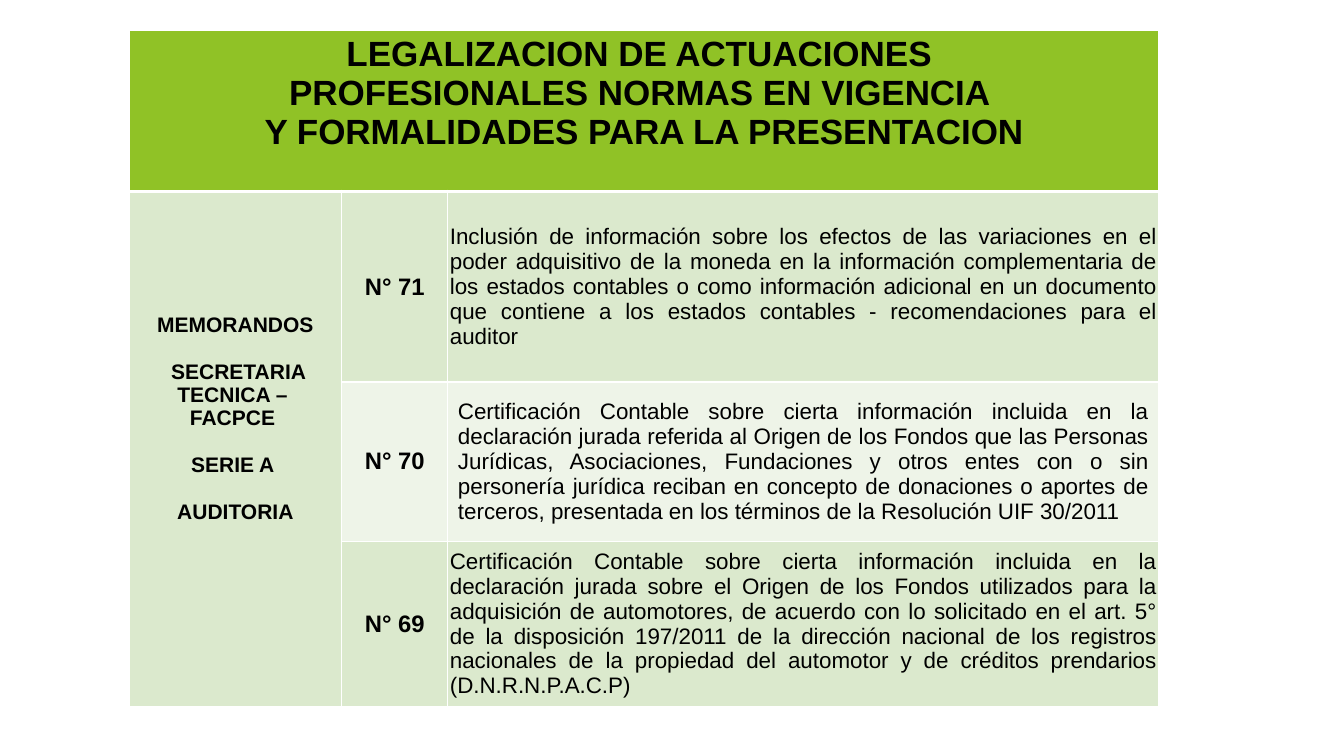
from lxml.etree import SubElement
from pptx import Presentation
from pptx.dml.color import RGBColor as RGB
from pptx.enum.text import MSO_ANCHOR as ANCHOR, PP_ALIGN as ALIGN
from pptx.oxml.ns import qn
from pptx.util import Inches, Pt

COLORS = {"header": "90C226", "band": "DBE9CD", "light": "EEF4E8",
          "text": "000000", "border": "FFFFFF"}
TITLE = {"size": Pt(25), "bold": True}
SERIES = {"size": Pt(15), "bold": True}
NUMBER = {"size": Pt(17), "bold": True}
DETAIL = {"size": Pt(16), "bold": False}
TIGHT = dict.fromkeys(
    ("margin_left", "margin_right", "margin_top", "margin_bottom"), Inches(0.02))


class Deck:
    def __init__(self, width, height):
        self.prs = Presentation()
        self.prs.slide_width, self.prs.slide_height = Inches(width), Inches(height)
        self.s = self.prs.slides.add_slide(self.prs.slide_layouts[6])

    def x(self, percent):
        return int(self.prs.slide_width * percent / 100)

    def y(self, percent):
        return int(self.prs.slide_height * percent / 100)

    def table(self, left, top, widths, heights):
        """Add a table; all lengths are percentages of the slide."""
        tbl = self.s.shapes.add_table(
            len(heights), len(widths), self.x(left), self.y(top),
            self.x(sum(widths)), self.y(sum(heights))).table
        tbl.first_row = tbl.horz_banding = False
        for col, width in zip(tbl.columns, widths):
            col.width = self.x(width)
        for row, height in zip(tbl.rows, heights):
            row.height = self.y(height)
        return tbl

    def finish(self, cell, color, thick=""):
        """Draw the borders, the thick side in 3 pt, then fill the cell."""
        tcPr = cell._tc.get_or_add_tcPr()
        for side in "LRTB":
            ln = SubElement(tcPr, qn(f"a:ln{side}"),
                            w=str(Pt(3 if side == thick else 1)))
            fill = SubElement(ln, qn("a:solidFill"))
            SubElement(fill, qn("a:srgbClr"), val=COLORS["border"])
        cell.fill.solid()
        cell.fill.fore_color.rgb = RGB.from_string(COLORS[color])

    def text(self, cell, lines, font, align=ALIGN.CENTER, gaps=(), **box):
        """Write one paragraph a line; gaps lists those set off by a line."""
        for name, value in box.items():
            setattr(cell, name, value)
        tf = cell.text_frame
        for i, line in enumerate(lines):
            p = tf.add_paragraph() if i else tf.paragraphs[0]
            p.alignment = align
            if i in gaps:
                p.space_before = Pt(16.8)
            r = p.add_run()
            r.text = line
            for name, value in {"name": "Arial", **font}.items():
                setattr(r.font, name, value)
            r.font.color.rgb = RGB.from_string(COLORS["text"])


MEMOS = [
    ("N° 71", "Inclusión de información sobre los efectos de las variaciones en el "
     "poder adquisitivo de la moneda en la información complementaria de los estados "
     "contables o como información adicional en un documento que contiene a los "
     "estados contables - recomendaciones para el auditor", "band", TIGHT),
    ("N° 70", "Certificación Contable sobre cierta información incluida en la "
     "declaración jurada referida al Origen de los Fondos que las Personas Jurídicas, "
     "Asociaciones, Fundaciones y otros entes con o sin personería jurídica reciban "
     "en concepto de donaciones o aportes de terceros, presentada en los términos de "
     "la Resolución UIF 30/2011", "light", {}),
    ("N° 69", "Certificación Contable sobre cierta información incluida en la "
     "declaración jurada sobre el Origen de los Fondos utilizados para la adquisición "
     "de automotores, de acuerdo con lo solicitado en el art. 5° de la disposición "
     "197/2011 de la dirección nacional de los registros nacionales de la propiedad "
     "del automotor y de créditos prendarios (D.N.R.N.P.A.C.P)", "band", TIGHT),
]


def main():
    deck = Deck(13.33, 7.5)
    tbl = deck.table(9.6, 4, (15.83, 7.9, 52.9), (21.33, 25.2, 21.07, 21.87))

    # Header across all columns
    for col in range(3):
        deck.finish(tbl.cell(0, col), "header", "B")
    tbl.cell(0, 0).merge(tbl.cell(0, 2))
    deck.text(tbl.cell(0, 0), ["LEGALIZACION DE ACTUACIONES ",
                               "PROFESIONALES NORMAS EN VIGENCIA ",
                               "Y FORMALIDADES PARA LA PRESENTACION"], TITLE)

    # Memo numbers and descriptions
    for row, (number, detail, color, margins) in enumerate(MEMOS, 1):
        thick = "T" if row == 1 else ""
        for col, fill in enumerate(("band", color, color)):
            deck.finish(tbl.cell(row, col), fill, thick)
        deck.text(tbl.cell(row, 1), [number], NUMBER, vertical_anchor=ANCHOR.MIDDLE)
        deck.text(tbl.cell(row, 2), [detail], DETAIL, ALIGN.JUSTIFY,
                  vertical_anchor=ANCHOR.MIDDLE, **margins)

    # Series label beside all memos
    tbl.cell(1, 0).merge(tbl.cell(3, 0))
    deck.text(tbl.cell(1, 0), ["MEMORANDOS", " SECRETARIA TECNICA – ", "FACPCE ",
                               "SERIE A ", "AUDITORIA"],
              SERIES, gaps=(1, 3, 4), margin_top=Inches(1.21))

    deck.prs.save("out.pptx")


if __name__ == "__main__":
    main()
